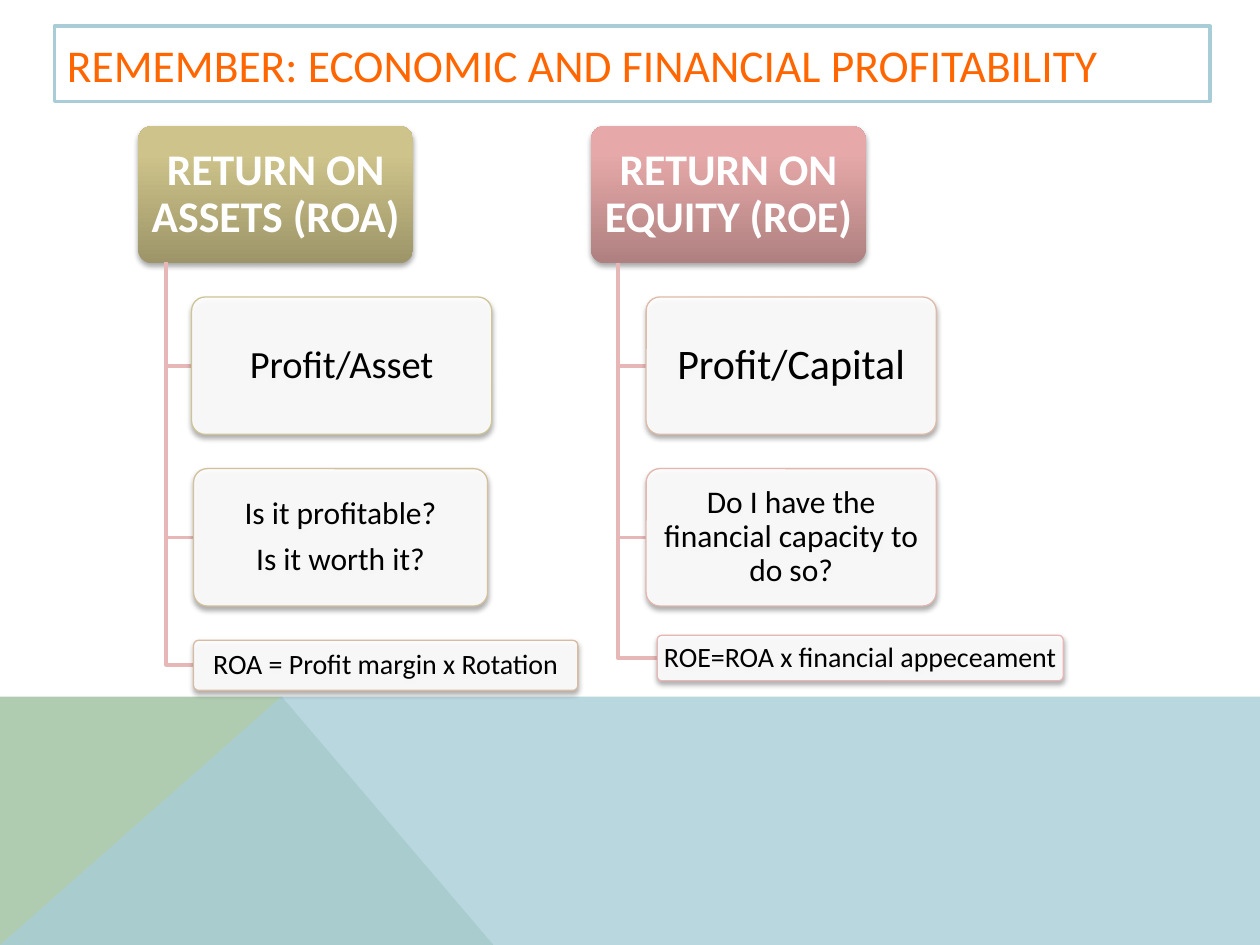
from dataclasses import dataclass

from lxml.etree import SubElement
from pptx import Presentation
from pptx.dml.color import RGBColor
from pptx.enum.shapes import MSO_SHAPE
from pptx.enum.text import MSO_ANCHOR, MSO_AUTO_SIZE, PP_ALIGN
from pptx.oxml.ns import qn
from pptx.util import Pt

FONT = "Calibri"
ROSE = "E7B7B7"
TOP, WIDE, HIGH = 72, 157, 78.5  # head boxes
STEM = 15.7  # head's left edge to its stem


@dataclass
class Box:
    text: str
    left: float
    top: float
    width: float
    height: float
    size: float
    edge: str
    pad: float = 5


@dataclass
class Tree:
    head: str
    left: float
    stops: list[tuple[int, str]]
    kids: list[Box]


TREES = [
    Tree("RETURN ON ASSETS (ROA)", 79,
         [(0, "9D9569"), (80, "CEC38A"), (100, "D1C588")],
         [Box("Profit/Asset", 109.5, 169.7, 171.5, HIGH, 22, "CEC597"),
          Box("Is it profitable?\nIs it worth it?", 110.6, 267.8, 168, HIGH, 18, "D3C09C"),
          Box("ROA = Profit margin x Rotation", 110.6, 365.9, 219.6, 28.6, 16, "D8BCA2", 3)]),
    Tree("RETURN ON EQUITY (ROE)", 337.7,
         [(0, "AF8080"), (80, "E6A8A8"), (100, "E8A7A7")],
         [Box("Profit/Capital", 369.2, 169.7, 165.8, HIGH, 24, "DEBAA8"),
          Box("Do I have the financial capacity to do so?",
              369.2, 267.8, 165.8, HIGH, 18, "E3B7AF"),
          Box("ROE=ROA x financial appeceament", 375.6, 363, 232, 26, 16, "E7B6B6", 3)]),
]


def paint(part, color: str, alpha: int = 100) -> None:
    """Give a fill or a line's fill one colour, with opacity in percent."""
    part.solid()
    part.fore_color.rgb = RGBColor.from_string(color)
    if alpha < 100:
        node = part._xPr.find(qn("a:solidFill"))[0]
        SubElement(node, qn("a:alpha"), val=str(alpha * 1000))


def write(shape, text: str, *, size: float, color: str, bold: bool = False,
          align=PP_ALIGN.CENTER, space: float = 0.9, gap: float = 6.3,
          pad: tuple[float, float] = (5, 4)) -> None:
    frame = shape.text_frame
    frame.word_wrap = True
    frame.auto_size = MSO_AUTO_SIZE.NONE
    frame.vertical_anchor = MSO_ANCHOR.MIDDLE
    frame.margin_left = frame.margin_right = Pt(pad[0])
    frame.margin_top = frame.margin_bottom = Pt(pad[1])
    frame.text = text
    for i, para in enumerate(frame.paragraphs):
        para.alignment = align
        para.line_spacing = space
        para.space_before = Pt(gap if i else 0)
        for run in para.runs:
            font = run.font
            font.name, font.size, font.bold = FONT, Pt(size), bold
            font.color.rgb = RGBColor.from_string(color)


def outline(slide, points: list[tuple[float, float]], close: bool):
    pen = slide.shapes.build_freeform(*points[0], scale=Pt(1))
    pen.add_line_segments(points[1:], close=close)
    shape = pen.convert_to_shape()
    shape.shadow.inherit = False
    return shape


def area(slide, points: list[tuple[float, float]], color: str, alpha: int = 100) -> None:
    shape = outline(slide, points, True)
    paint(shape.fill, color, alpha)
    shape.line.fill.background()


def elbow(slide, left: float, box: Box) -> None:
    end = box.top + box.height / 2
    shape = outline(slide, [(left, TOP + HIGH), (left, end), (box.left, end)], False)
    shape.fill.background()
    paint(shape.line.fill, ROSE)
    shape.line.width = Pt(2)


def card(slide, left: float, top: float, width: float, height: float):
    """Add a rounded box with a soft shadow below it."""
    shape = slide.shapes.add_shape(
        MSO_SHAPE.ROUNDED_RECTANGLE, Pt(left), Pt(top), Pt(width), Pt(height))
    shape.adjustments[0] = 0.1
    shape.shadow.inherit = False
    glow = SubElement(shape._element.spPr.find(qn("a:effectLst")), qn("a:outerShdw"),
                      blurRad=str(Pt(3.1)), dist=str(Pt(1.8)), dir="5400000",
                      rotWithShape="0")
    tint = SubElement(glow, qn("a:srgbClr"), val="000000")
    SubElement(tint, qn("a:alpha"), val="35000")
    return shape


def blend(shape, stops: list[tuple[int, str]]) -> None:
    """Fill a shape with a gradient that runs from bottom to top."""
    shape.fill.gradient()
    grad = shape._element.spPr.find(qn("a:gradFill"))
    for node in list(grad):
        grad.remove(node)
    items = SubElement(grad, qn("a:gsLst"))
    for place, color in stops:
        stop = SubElement(items, qn("a:gs"), pos=str(place * 1000))
        SubElement(stop, qn("a:srgbClr"), val=color)
    SubElement(grad, qn("a:lin"), ang="16200000", scaled="0")


def draw(slide, tree: Tree) -> None:
    head = card(slide, tree.left, TOP, WIDE, HIGH)
    blend(head, tree.stops)
    head.line.fill.background()
    write(head, tree.head, size=25, color="FFFFFF", bold=True)
    for box in tree.kids:
        elbow(slide, tree.left + STEM, box)
        shape = card(slide, box.left, box.top, box.width, box.height)
        paint(shape.fill, "FFFFFF", 90)
        paint(shape.line.fill, box.edge)
        shape.line.width = Pt(0.75)
        write(shape, box.text, size=box.size, color="000000", pad=(box.pad, 2))


def main() -> None:
    deck = Presentation()
    deck.slide_width, deck.slide_height = Pt(720), Pt(540)
    slide = deck.slides.add_slide(deck.slide_layouts[5])

    # Coloured ground
    area(slide, [(0, 540), (0, 397.6), (160.8, 397.6), (281.5, 540)], "B0CCB0")
    area(slide, [(0, 540), (160.8, 397.6), (720, 397.9), (720, 540)], "A8CDD7", 80)

    # Title
    title = slide.shapes.title
    title.left, title.top, title.width, title.height = Pt(31), Pt(15), Pt(660.5), Pt(43)
    paint(title.fill, "FFFFFF")
    paint(title.line.fill, "A8CDD7")
    title.line.width = Pt(2)
    write(title, "REMEMBER: ECONOMIC AND FINANCIAL PROFITABILITY", size=26,
          color="FF6600", align=PP_ALIGN.LEFT, space=1, pad=(7.2, 3.6))

    # Two trees of ratios
    for tree in TREES:
        draw(slide, tree)

    deck.save("out.pptx")


if __name__ == "__main__":
    main()
